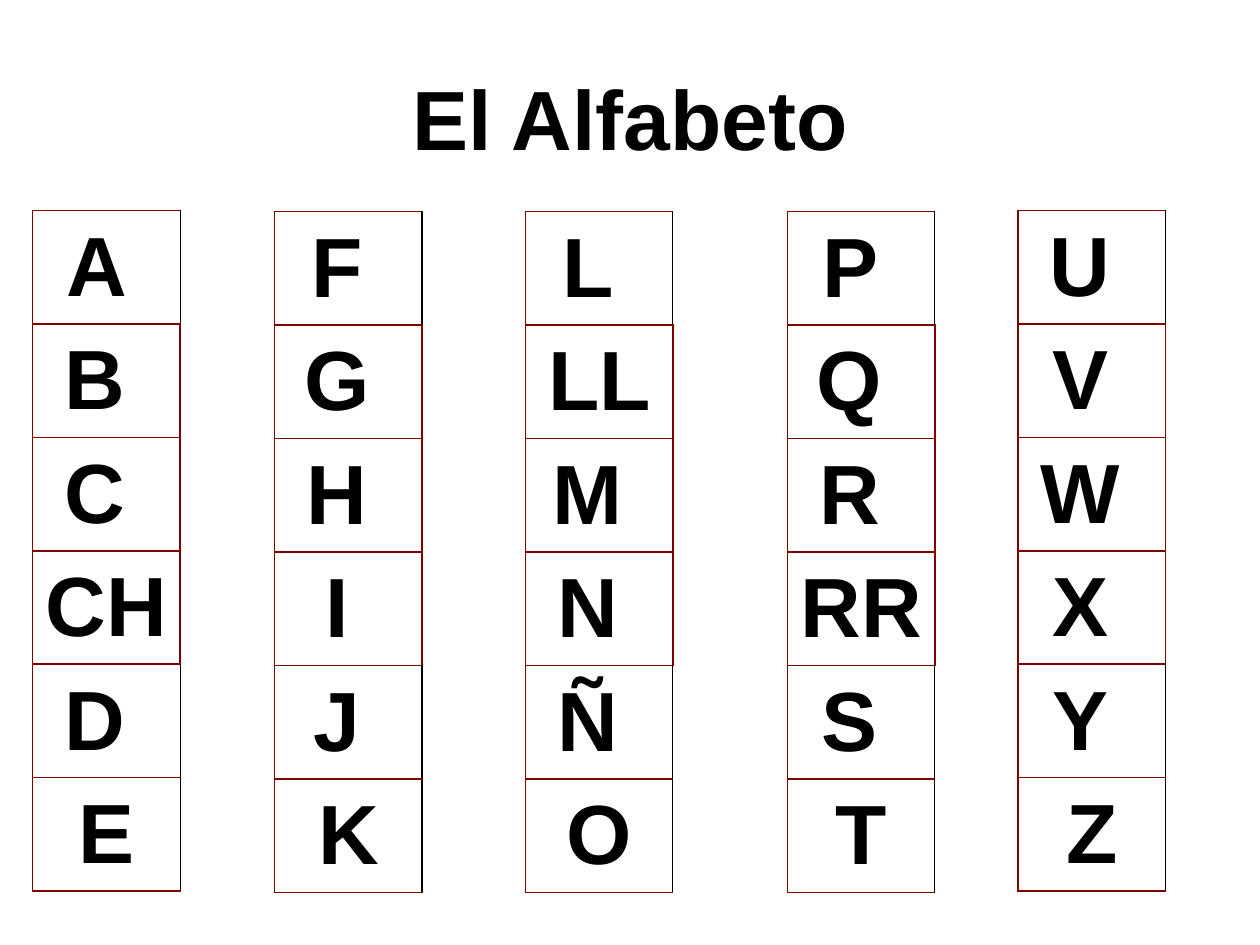
from lxml import etree
from pptx import Presentation
from pptx import util as u
from pptx.dml.color import RGBColor
from pptx.enum import text
from pptx.oxml import ns

BLACK = RGBColor(0, 0, 0)
MAROON = RGBColor(0x80, 0, 0)
WHITE = RGBColor(255, 255, 255)

COLUMNS = [
    (0.26, 1.67, ["A ", "B ", "C ", "CH ", "D ", "E"]),
    (2.18, 1.68, ["F ", "G ", "H ", "I ", "J ", "K"]),
    (4.17, 1.68, ["L ", "LL ", "M ", "N ", "Ñ ", "O"]),
    (6.25, 1.68, ["P ", "Q ", "R ", "RR ", "S ", "T"]),
    (8.08, 1.67, ["U ", "V ", "W ", "X ", "Y ", "Z"]),
]
COLUMN_WIDTH, ROW_HEIGHT = 1.17, 0.9
MAROON_RIGHT_ROWS = range(1, 4)


class AlphabetSlide:
    font_name = "Arial"
    font_size = u.Pt(48)

    def __init__(self, deck):
        self.slide = deck.slides.add_slide(deck.slide_layouts[6])
        fill = self.slide.background.fill
        fill.solid()
        fill.fore_color.rgb = WHITE

    def set_words(self, frame, words):
        frame.text = words
        para = frame.paragraphs[0]
        para.alignment = text.PP_ALIGN.CENTER
        font = para.runs[0].font
        font.name, font.size, font.bold = self.font_name, self.font_size, True
        font.color.rgb = BLACK
        return para

    def title(self, words, left, top, width, height):
        box = self.slide.shapes.add_textbox(*map(u.Inches, (left, top, width, height)))
        frame = box.text_frame
        frame.word_wrap = True
        frame.vertical_anchor = text.MSO_ANCHOR.MIDDLE
        self.set_words(frame, words)

    def border(self, cell, side, color, points):
        properties = cell._tc.get_or_add_tcPr()
        line = etree.SubElement(properties, ns.qn(f"a:ln{side}"), w=str(u.Pt(points)))
        fill = etree.SubElement(line, ns.qn("a:solidFill"))
        etree.SubElement(fill, ns.qn("a:srgbClr"), val=str(color))

    def letter_table(self, left, top, letters):
        size = (left, top, COLUMN_WIDTH, ROW_HEIGHT * len(letters))
        table = self.slide.shapes.add_table(len(letters), 1, *map(u.Inches, size)).table
        table.first_row = table.horz_banding = False
        for row, letter in enumerate(letters):
            table.rows[row].height = u.Inches(ROW_HEIGHT)
            cell = table.cell(row, 0)
            cell.vertical_anchor = text.MSO_ANCHOR.MIDDLE
            para = self.set_words(cell.text_frame, letter)
            indent = u.Inches(0.38)
            properties = para._p.get_or_add_pPr()
            properties.set("marL", str(indent))
            properties.set("indent", str(-indent))
            right = (MAROON, 1) if row in MAROON_RIGHT_ROWS else (BLACK, 0.75)
            for side in "LRTB":
                self.border(cell, side, *(right if side == "R" else (MAROON, 1)))
            cell.fill.background()


def main():
    deck = Presentation()
    deck.slide_width, deck.slide_height = u.Inches(10), u.Inches(7.5)
    page = AlphabetSlide(deck)
    page.title("El Alfabeto", 0.5, 0.3, 9, 1.25)
    for left, top, letters in COLUMNS:
        page.letter_table(left, top, letters)
    deck.save("out.pptx")


if __name__ == "__main__":
    main()
